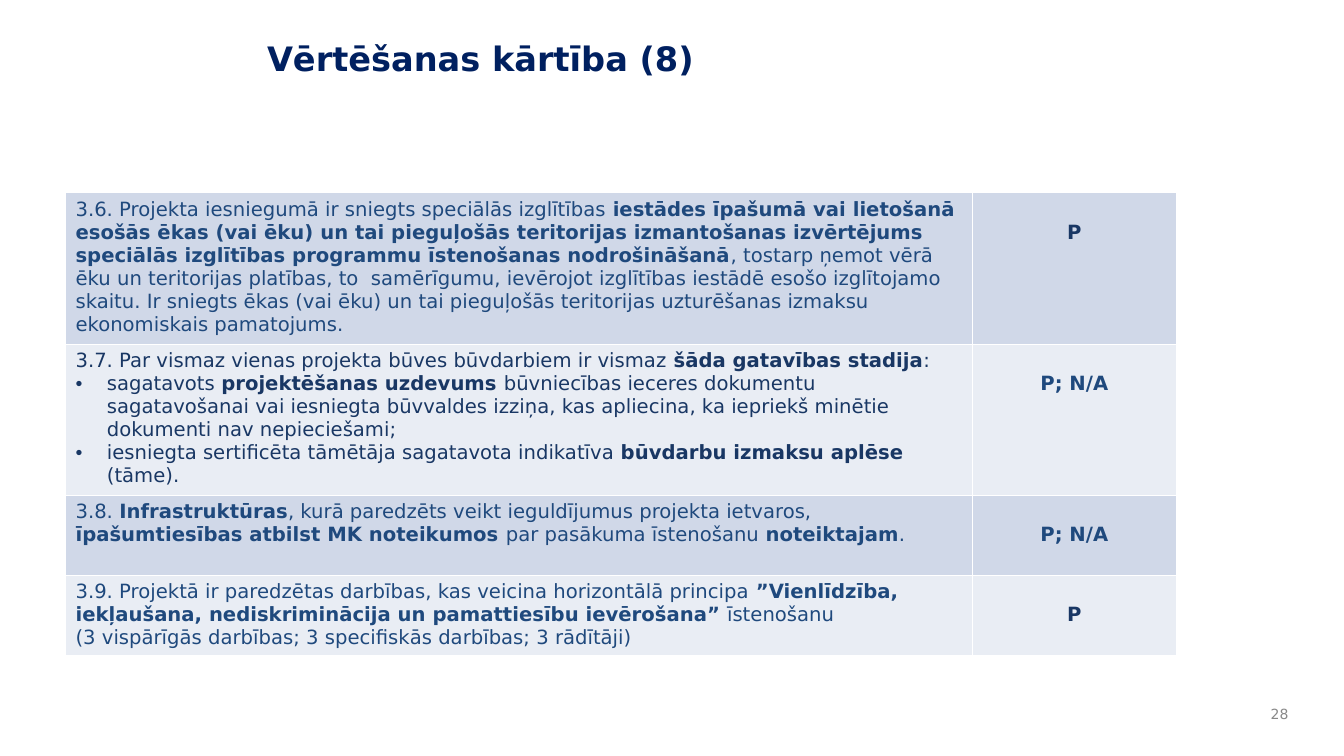
from dataclasses import dataclass

from lxml import etree
from pptx import Presentation
from pptx.dml.color import RGBColor
from pptx.enum.text import MSO_ANCHOR, PP_ALIGN
from pptx.oxml.ns import qn
from pptx.util import Cm, Pt

LEFT, CENTER, RIGHT = PP_ALIGN.LEFT, PP_ALIGN.CENTER, PP_ALIGN.RIGHT
TOP, MIDDLE = MSO_ANCHOR.TOP, MSO_ANCHOR.MIDDLE


@dataclass(frozen=True)
class Theme:
    font: str = "DejaVu Sans"
    title_size: int = 24
    body_size: int = 14
    number_size: int = 10
    title: str = "002060"
    blue: str = "1F497D"
    navy: str = "193764"
    grey: str = "898989"
    border: str = "FFFFFF"
    bands: tuple = ("D0D8E8", "E9EDF4")


THEME = Theme()
BULLET = "• "
COLUMN_WIDTHS = (22.86, 5.13)

# Row height, criterion colour, criterion paragraphs, mark colour, mark.
# Asterisks enclose bold words.
CRITERIA = [
    (3.72, THEME.blue, [
        "3.6. Projekta iesniegumā ir sniegts speciālās izglītības *iestādes īpašumā vai lietošanā "
        "esošās ēkas (vai ēku) un tai pieguļošās teritorijas izmantošanas izvērtējums speciālās "
        "izglītības programmu īstenošanas nodrošināšanā*, tostarp ņemot vērā ēku un teritorijas "
        "platības, to  samērīgumu, ievērojot izglītības iestādē esošo izglītojamo skaitu. Ir sniegts "
        "ēkas (vai ēku) un tai pieguļošās teritorijas uzturēšanas izmaksu ekonomiskais pamatojums.",
    ], THEME.navy, "P"),
    (3.72, THEME.navy, [
        "3.7. Par vismaz vienas projekta būves būvdarbiem ir vismaz *šāda gatavības stadija*:",
        BULLET + "sagatavots *projektēšanas uzdevums *būvniecības ieceres dokumentu sagatavošanai "
        "vai iesniegta būvvaldes izziņa, kas apliecina, ka iepriekš minētie dokumenti nav "
        "nepieciešami;",
        BULLET + "iesniegta sertificēta tāmētāja sagatavota indikatīva *būvdarbu izmaksu aplēse *"
        "(tāme).",
    ], THEME.blue, "P; N/A"),
    (2.01, THEME.blue, [
        "3.8. *Infrastruktūras*, kurā paredzēts veikt ieguldījumus projekta ietvaros, "
        "*īpašumtiesības atbilst MK noteikumos *par pasākuma īstenošanu *noteiktajam*.",
    ], THEME.blue, "P; N/A"),
    (2.01, THEME.blue, [
        "3.9. Projektā ir paredzētas darbības, kas veicina horizontālā principa *”Vienlīdzība, "
        "iekļaušana, nediskriminācija un pamattiesību ievērošana”* īstenošanu",
        "(3 vispārīgās darbības; 3 specifiskās darbības; 3 rādītāji)",
    ], THEME.navy, "P"),
]


def add_bullet(paragraph):
    properties = paragraph._p.get_or_add_pPr()
    properties.set("marL", str(Cm(0.79)))
    properties.set("indent", str(-Cm(0.79)))
    etree.SubElement(properties, qn("a:buFont"), typeface="Arial")
    etree.SubElement(properties, qn("a:buChar"), char=BULLET.strip())


def write_text(text_frame, lines, size, color, alignment=LEFT):
    """Write one paragraph per line; words between asterisks become bold."""
    text_frame.word_wrap = True
    for index, line in enumerate(lines):
        paragraph = text_frame.add_paragraph() if index else text_frame.paragraphs[0]
        paragraph.alignment = alignment
        if line.startswith(BULLET):
            add_bullet(paragraph)
            line = line.removeprefix(BULLET)
        for position, part in enumerate(line.split("*")):
            if part:
                run = paragraph.add_run()
                run.text = part
                run.font.name = THEME.font
                run.font.size = Pt(size)
                run.font.bold = position % 2 == 1
                run.font.color.rgb = RGBColor.from_string(color)


def add_label(slide, box, text, size, color, alignment=LEFT, anchor=TOP):
    text_frame = slide.shapes.add_textbox(*map(Cm, box)).text_frame
    text_frame.vertical_anchor = anchor
    write_text(text_frame, [text], size, color, alignment)


def style_cell(cell, fill):
    """Give the cell thin borders and a plain fill."""
    properties = cell._tc.get_or_add_tcPr()
    for side in ("a:lnL", "a:lnR", "a:lnT", "a:lnB"):
        line = etree.SubElement(properties, qn(side), w=str(Pt(1)))
        solid = etree.SubElement(line, qn("a:solidFill"))
        etree.SubElement(solid, qn("a:srgbClr"), val=THEME.border)
    cell.fill.solid()
    cell.fill.fore_color.rgb = RGBColor.from_string(fill)


def add_criteria_table(slide, left, top):
    width = sum(COLUMN_WIDTHS)
    height = sum(criterion[0] for criterion in CRITERIA)
    frame = slide.shapes.add_table(len(CRITERIA), len(COLUMN_WIDTHS),
                                   Cm(left), Cm(top), Cm(width), Cm(height))
    table = frame.table
    table.first_row = False
    for column, column_width in zip(table.columns, COLUMN_WIDTHS):
        column.width = Cm(column_width)
    for index, (row_height, color, lines, mark_color, mark) in enumerate(CRITERIA):
        row = table.rows[index]
        row.height = Cm(row_height)
        criterion_cell, mark_cell = row.cells
        for cell in row.cells:
            style_cell(cell, THEME.bands[index % 2])
        write_text(criterion_cell.text_frame, lines, THEME.body_size, color)
        mark_cell.margin_top = Cm(0.71)
        write_text(mark_cell.text_frame, [f"*{mark}*"], THEME.body_size, mark_color, CENTER)


def main():
    presentation = Presentation()
    presentation.slide_width, presentation.slide_height = Cm(33.87), Cm(19.05)
    slide = presentation.slides.add_slide(presentation.slide_layouts[6])
    add_label(slide, (31.6, 17.58, 1.12, 0.84), "28", THEME.number_size, THEME.grey, RIGHT, MIDDLE)
    add_label(slide, (6.48, 0.84, 25.7, 2.97), "*Vērtēšanas kārtība (8)*",
              THEME.title_size, THEME.title)
    add_criteria_table(slide, 1.65, 4.86)
    presentation.save("out.pptx")


if __name__ == "__main__":
    main()
